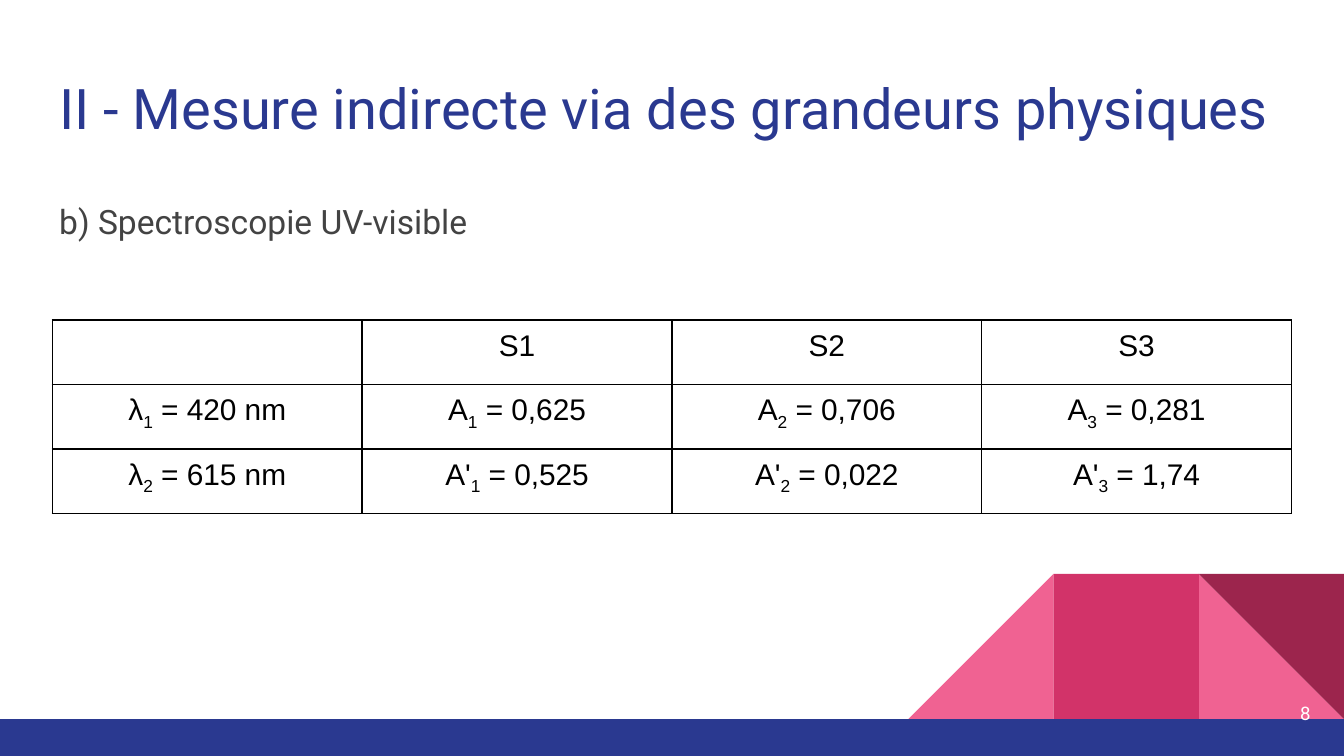
"""Build the UV-visible spectroscopy slide with its absorbance table."""
import pptx
import pptx.dml.color
import pptx.enum.shapes
import pptx.enum.text
import pptx.oxml
import pptx.oxml.ns
import pptx.util

Inches = pptx.util.Inches
Pt = pptx.util.Pt
SHAPE = pptx.enum.shapes.MSO_SHAPE
ALIGN = pptx.enum.text.PP_ALIGN
ANCHOR = pptx.enum.text.MSO_ANCHOR

COLORS = {
    "navy": "2A3990",
    "pink": "F06292",
    "rose": "D23369",
    "wine": "9C254D",
    "grey": "434343",
    "black": "000000",
    "white": "FFFFFF",
}


class SlideBuilder:
    def __init__(self, prs, font):
        self.s = prs.slides.add_slide(prs.slide_layouts[1])
        self.font = font

    def color(self, name):
        return pptx.dml.color.RGBColor.from_string(COLORS[name])

    def run(self, p, text, size, color, font=None, sub=False):
        r = p.add_run()
        r.text = text
        r.font.name = font or self.font
        r.font.size = Pt(size)
        r.font.color.rgb = self.color(color)
        if sub:
            r.font._element.set("baseline", "-25000")

    def shape(self, kind, x, y, w, h, color, flip=False, rotation=0):
        sp = self.s.shapes.add_shape(kind, Inches(x), Inches(y), Inches(w), Inches(h))
        sp.shadow.inherit = False
        sp.fill.solid()
        sp.fill.fore_color.rgb = self.color(color)
        sp.line.fill.background()
        sp.rotation = rotation
        if flip:
            sp._element.spPr.xfrm.set("flipH", "1")

    def text(self, sp, box, text, size, color, align=ALIGN.LEFT, anchor=ANCHOR.TOP, spacing=1.0):
        sp.left, sp.top, sp.width, sp.height = map(Inches, box)
        tf = sp.text_frame
        tf.word_wrap = True
        tf.auto_size = pptx.enum.text.MSO_AUTO_SIZE.NONE
        tf.vertical_anchor = anchor
        tf.margin_left = tf.margin_right = tf.margin_top = tf.margin_bottom = Inches(0.1)
        p = tf.paragraphs[0]
        p.alignment = align
        p.line_spacing = spacing
        p.space_before = Pt(0)
        pPr = p._p.get_or_add_pPr()
        pPr.set("marL", "0")
        pPr.set("indent", "0")
        pPr.append(pptx.oxml.parse_xml(f'<a:buNone {pptx.oxml.ns.nsdecls("a")}/>'))
        self.run(p, text, size, color)

    def placeholder(self, idx, box, text, size, color, **style):
        self.text(self.s.placeholders[idx], box, text, size, color, **style)

    def textbox(self, box, text, size, color, **style):
        sp = self.s.shapes.add_textbox(*map(Inches, box))
        self.text(sp, box, text, size, color, **style)

    def borders(self, cell, color, width):
        tcPr = cell._tc.get_or_add_tcPr()
        for i, side in enumerate(("lnL", "lnR", "lnT", "lnB")):
            tcPr.insert(i, pptx.oxml.parse_xml(
                f'<a:{side} {pptx.oxml.ns.nsdecls("a")} w="{Pt(width)}"><a:solidFill>'
                f'<a:srgbClr val="{COLORS[color]}"/></a:solidFill></a:{side}>'))

    def table(self, x, y, width, row_h, rows, size, font):
        n_rows, n_cols = len(rows), len(rows[0])
        tbl = self.s.shapes.add_table(
            n_rows, n_cols, Inches(x), Inches(y),
            Inches(width), Inches(row_h * n_rows)).table
        tbl.first_row = tbl.horz_banding = False
        for i, row in enumerate(rows):
            tbl.rows[i].height = Inches(row_h)
            for j, parts in enumerate(row):
                cell = tbl.cell(i, j)
                cell.fill.background()
                self.borders(cell, "black", 1)
                cell.margin_left = cell.margin_right = Inches(0.07)
                cell.margin_top = cell.margin_bottom = Inches(0.07)
                p = cell.text_frame.paragraphs[0]
                p.alignment = ALIGN.CENTER
                for k, part in enumerate(parts):
                    self.run(p, part, size, "black", font, sub=k == 1)


def main():
    prs = pptx.Presentation()
    prs.slide_width = Inches(10)
    prs.slide_height = prs.slide_width * 9 // 16
    b = SlideBuilder(prs, "Roboto")

    side, top = 1.08, 4.27
    right = 10 - side
    b.shape(SHAPE.RIGHT_TRIANGLE, right, top, side, side, "pink")
    b.shape(SHAPE.RIGHT_TRIANGLE, right - 2 * side, top, side, side, "pink", flip=True)
    b.shape(SHAPE.RECTANGLE, right - side, top, side, side, "rose")
    b.shape(SHAPE.RIGHT_TRIANGLE, right, top, side, side, "wine", rotation=180)
    b.shape(SHAPE.RECTANGLE, 0, top + side, 10, 0.28, "navy")

    b.placeholder(0, (0.34, 0.45, 9.32, 0.66),
                  "II - Mesure indirecte via des grandeurs physiques", 30, "navy")
    b.placeholder(1, (0.34, 1.35, 9.32, 3.65),
                  "b) Spectroscopie UV-visible", 18, "grey", spacing=1.15)
    b.textbox((9.25, 5.09, 0.6, 0.43), "8", 10, "white",
              align=ALIGN.RIGHT, anchor=ANCHOR.MIDDLE)

    rows = [
        [(), ("S1",), ("S2",), ("S3",)],
        [("λ", "1", " = 420 nm"), ("A", "1", " = 0,625"),
         ("A", "2", " = 0,706"), ("A", "3", " = 0,281")],
        [("λ", "2", " = 615 nm"), ("A'", "1", " = 0,525"),
         ("A'", "2", " = 0,022"), ("A'", "3", " = 1,74")],
    ]
    b.table(0.39, 2.38, 9.22, 0.48, rows, 16, "Arial")

    prs.save("out.pptx")


if __name__ == "__main__":
    main()
